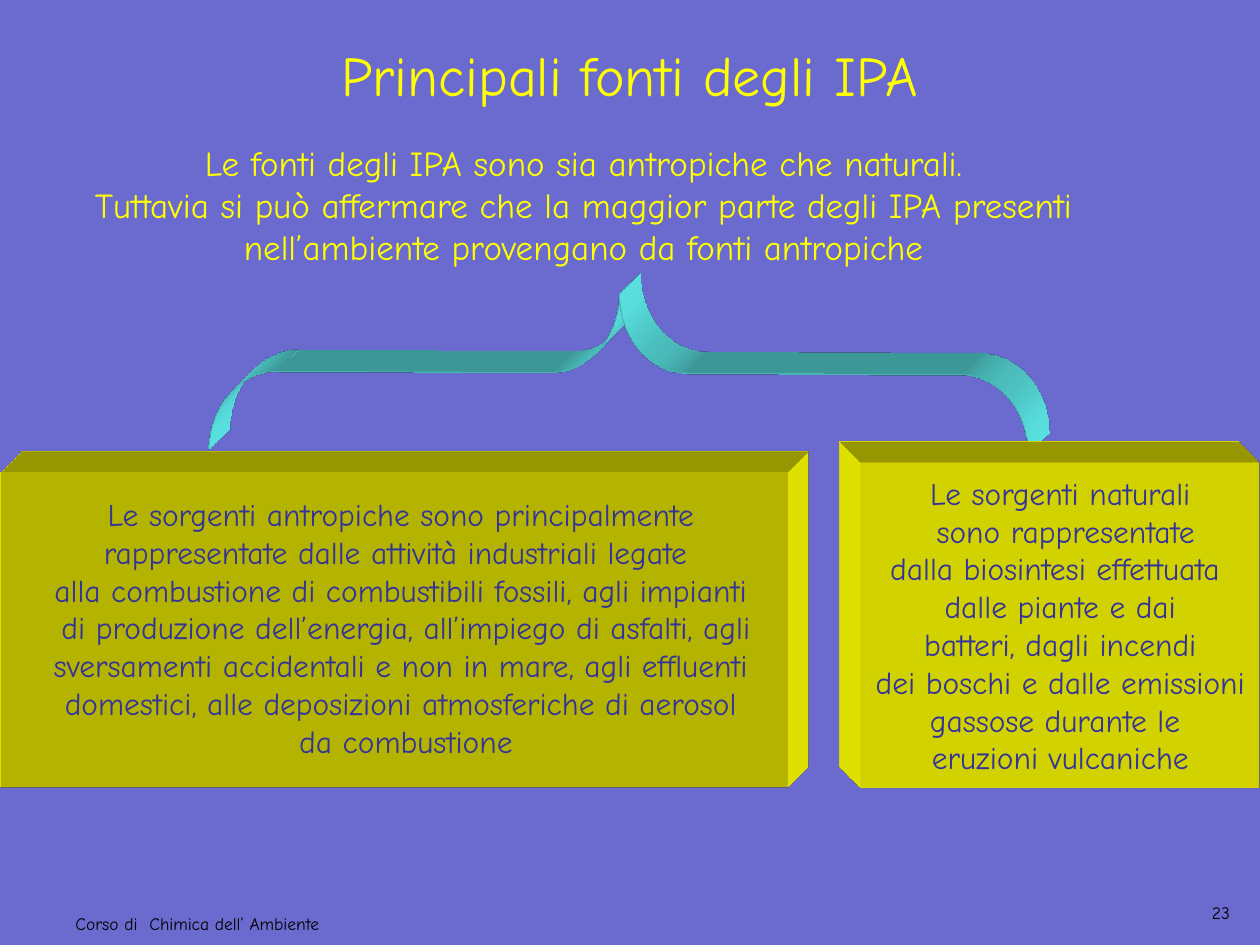
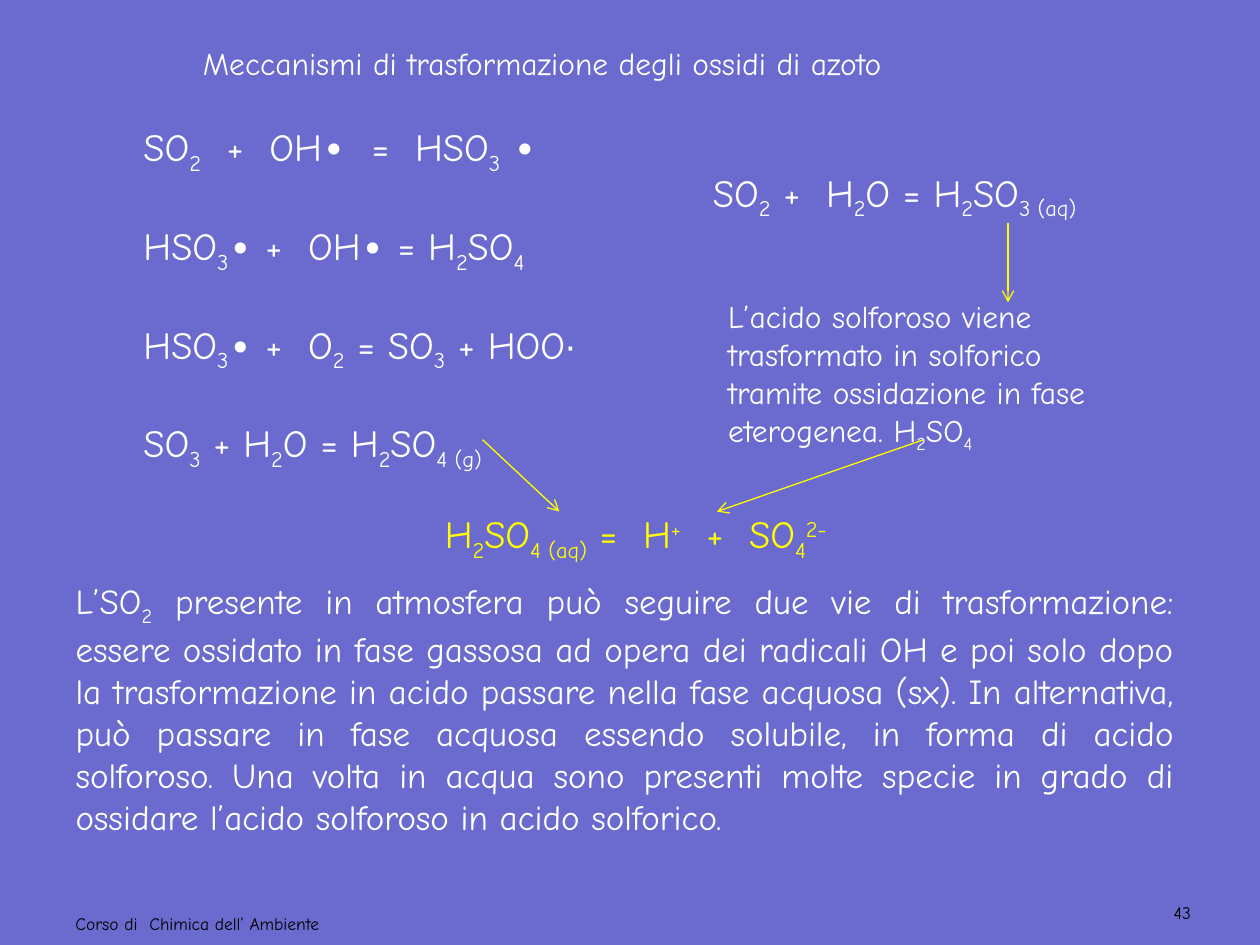
from lxml import etree
from pptx import Presentation
from pptx.dml.color import RGBColor
from pptx.enum.shapes import MSO_CONNECTOR as Link, MSO_SHAPE as Form
from pptx.enum.text import MSO_ANCHOR as Anchor, MSO_AUTO_SIZE as Fit, PP_ALIGN as Align
from pptx.oxml.ns import qn
from pptx.util import Inches, Pt

# Shared look
FONT = "Comic Neue"
BACK, YELLOW, WHITE = "6B6BCF", "FFFF00", "FFFFFF"
BLACK, NAVY, CYAN = "000000", "333399", "66FFFF"
FOOTER = "Corso di  Chimica dell’ Ambiente"

# Slide 1 content
SOURCES = "Principali fonti degli IPA"
INTRO = [
    "Le fonti degli IPA sono sia antropiche che naturali. ",
    "Tuttavia si può affermare che la maggior parte degli IPA presenti ",
    "nell’ambiente provengano da fonti antropiche ",
]
HUMAN = [
    "Le sorgenti antropiche sono principalmente",
    "rappresentate dalle attività industriali legate ",
    "alla combustione di combustibili fossili, agli impianti",
    " di produzione dell’energia, all’impiego di asfalti, agli",
    "sversamenti accidentali e non in mare, agli effluenti",
    "domestici, alle deposizioni atmosferiche di aerosol",
    " da combustione",
]
NATURAL = [
    "Le sorgenti naturali",
    " sono rappresentate",
    "dalla biosintesi effettuata ",
    "dalle piante e dai",
    "batteri, dagli incendi",
    "dei boschi e dalle emissioni",
    "gassose durante le ",
    "eruzioni vulcaniche",
]

# Slide 2 content: ~sub~, ~^super~, ~@Arial~
OXIDES = "Meccanismi di trasformazione degli ossidi di azoto"
GAS = [
    "SO~2~  +  OH∙  =  HSO~3~ ∙",
    "HSO~3~∙ +  OH∙ = H~2~SO~4~",
    "HSO~3~∙ +  O~2~ = SO~3~ + HOO~@∙~",
    "SO~3~ + H~2~O = H~2~SO~4 (g)~",
]
WATER = ["SO~2~ +  H~2~O = H~2~SO~3 (aq)~"]
ACID = [
    "L’acido solforoso viene trasformato in solforico tramite "
    "ossidazione in fase eterogenea. H~2~SO~4~"
]
IONS = ["H~2~SO~4 (aq)~ =  H~^+~  +  SO~4~~^2-~"]
PATHS = [
    "L’SO~2~ presente in atmosfera può seguire due vie di trasformazione: "
    "essere ossidato in fase gassosa ad opera dei radicali OH e poi solo dopo "
    "la trasformazione in acido passare nella fase acquosa (sx). In alternativa, "
    "può passare in fase acquosa essendo solubile, in forma di acido solforoso. "
    "Una volta in acqua sono presenti molte specie in grado di ossidare "
    "l’acido solforoso in acido solforico. "
]
ARROWS = [
    ((7.33, 3.49), (5.69, 4.06)),
    ((3.83, 3.49), (4.44, 4.06)),
    ((8, 1.77), (8, 2.4)),
]


def rgb(code):
    return RGBColor.from_string(code)


def place(shape, at):
    shape.left, shape.top, shape.width, shape.height = map(Inches, at)


def write(shape, lines, size, color, align=Align.LEFT, anchor=Anchor.TOP, wrap=True, gap=0):
    frame = shape.text_frame
    frame.word_wrap = wrap
    frame.auto_size = Fit.NONE
    frame.vertical_anchor = anchor
    for i, line in enumerate(lines):
        para = frame.paragraphs[0] if i == 0 else frame.add_paragraph()
        para.alignment = align
        para.space_before = Pt(gap if i else 0)
        para.font.name, para.font.size = FONT, Pt(size)
        para.font.color.rgb = rgb(color)
        for j, part in enumerate(line.split("~")):
            if not part:
                continue
            run = para.add_run()
            run.text = part.lstrip("^@") if j % 2 else part
            if j % 2 and part[0] == "@":
                run.font.name = "Arial"
            elif j % 2:
                base = "30000" if part[0] == "^" else "-25000"
                run._r.get_or_add_rPr().set("baseline", base)


def label(slide, at, lines, size, color, **style):
    box = slide.shapes.add_textbox(*map(Inches, at))
    write(box, lines, size, color, **style)


def head(slide, at, text, size, color, **style):
    title = slide.shapes.title
    place(title, at)
    write(title, [text], size, color, **style)


def body(slide, at, lines, size, color, **style):
    shape = slide.placeholders[1]
    place(shape, at)
    write(shape, lines, size, color, **style)
    for para in shape.text_frame.paragraphs:
        props = para._p.get_or_add_pPr()
        props.set("marL", "0")
        props.set("indent", "0")
        props.find(qn("a:defRPr")).addprevious(etree.Element(qn("a:buNone")))


def start(deck, number, at):
    slide = deck.slides.add_slide(deck.slide_layouts[1])
    label(slide, at, [number], 10, BLACK, align=Align.RIGHT)
    label(slide, (0.5, 7.2, 3.08, 0.34), [FOOTER], 10, BLACK)
    return slide


def solid(slide, form, at, color, lean):
    """Preset shape extruded up and towards the lean side."""
    shape = slide.shapes.add_shape(form, *map(Inches, at))
    shape.shadow.inherit = False
    shape.fill.solid()
    shape.fill.fore_color.rgb = rgb(color)
    shape.line.fill.background()
    props = shape._element.spPr
    scene = etree.SubElement(props, qn("a:scene3d"))
    etree.SubElement(scene, qn("a:camera"), prst="legacyObliqueTop" + lean)
    etree.SubElement(scene, qn("a:lightRig"), rig="legacyFlat3", dir="b")
    depth = etree.SubElement(props, qn("a:sp3d"), extrusionH="430200",
                             prstMaterial="legacyMatte")
    for bevel in ("a:bevelT", "a:bevelB"):
        etree.SubElement(depth, qn(bevel), w="13500", h="13500", prst="angle")
    tint = etree.SubElement(depth, qn("a:extrusionClr"))
    etree.SubElement(tint, qn("a:srgbClr"), val=color)
    return shape


def arrow(slide, tail, tip):
    line = slide.shapes.add_connector(Link.STRAIGHT, *map(Inches, tail + tip))
    line.line.color.rgb = rgb(YELLOW)
    line.line.width = Pt(0.75)
    etree.SubElement(line.line._get_or_add_ln(), qn("a:tailEnd"), type="arrow")
    etree.SubElement(line._element.spPr, qn("a:effectLst"))


def sources(deck):
    slide = start(deck, "23", (9.33, 7.11, 0.53, 0.39))
    head(slide, (0.5, 0.25, 9, 0.67), SOURCES, 32, YELLOW,
         align=Align.CENTER, anchor=Anchor.MIDDLE)
    body(slide, (0.28, 1.07, 8.8, 1.1), INTRO, 20, YELLOW, align=Align.CENTER, wrap=False)

    # Brace above the two kinds of source
    solid(slide, Form.RECTANGLE, (0, 3.75, 6.25, 2.5), YELLOW, "Right")
    brace = solid(slide, Form.RIGHT_BRACE, (4.29, -0.29, 1.25, 6.5), CYAN, "Right")
    brace.rotation = 270.3
    brace.adjustments[0] = 0.433
    brace.fill.background()
    brace.line.color.rgb = rgb(CYAN)
    brace.line.width = Pt(0.75)
    nature = solid(slide, Form.RECTANGLE, (6.83, 3.67, 3.17, 2.58), YELLOW, "Left")
    write(nature, NATURAL, 18, NAVY, align=Align.CENTER, anchor=Anchor.MIDDLE, wrap=False)
    label(slide, (0.07, 3.88, 6.22, 2.2), HUMAN, 18, NAVY, align=Align.CENTER, wrap=False)


def oxides(deck):
    slide = start(deck, "43", (9.17, 7.11, 0.38, 0.34))
    head(slide, (1.51, 0.3, 6.97, 0.4), OXIDES, 18, WHITE)
    label(slide, (1.04, 0.93, 4.21, 2.69), GAS, 22, WHITE, gap=26.3)
    label(slide, (5.56, 1.29, 4.16, 0.47), WATER, 22, WHITE)
    body(slide, (0.5, 4.55, 8.92, 2.46), PATHS, 20, WHITE, align=Align.JUSTIFY)
    label(slide, (1.77, 4, 6.55, 0.47), IONS, 22, YELLOW, align=Align.CENTER)
    for tail, tip in ARROWS:
        arrow(slide, tail, tip)
    label(slide, (5.68, 2.31, 3.47, 1.31), ACID, 18, WHITE)


def main():
    deck = Presentation()
    deck.slide_width, deck.slide_height = Inches(10), Inches(7.5)
    fill = deck.slide_master.background.fill
    fill.solid()
    fill.fore_color.rgb = rgb(BACK)
    sources(deck)
    oxides(deck)
    deck.save("out.pptx")


if __name__ == "__main__":
    main()
